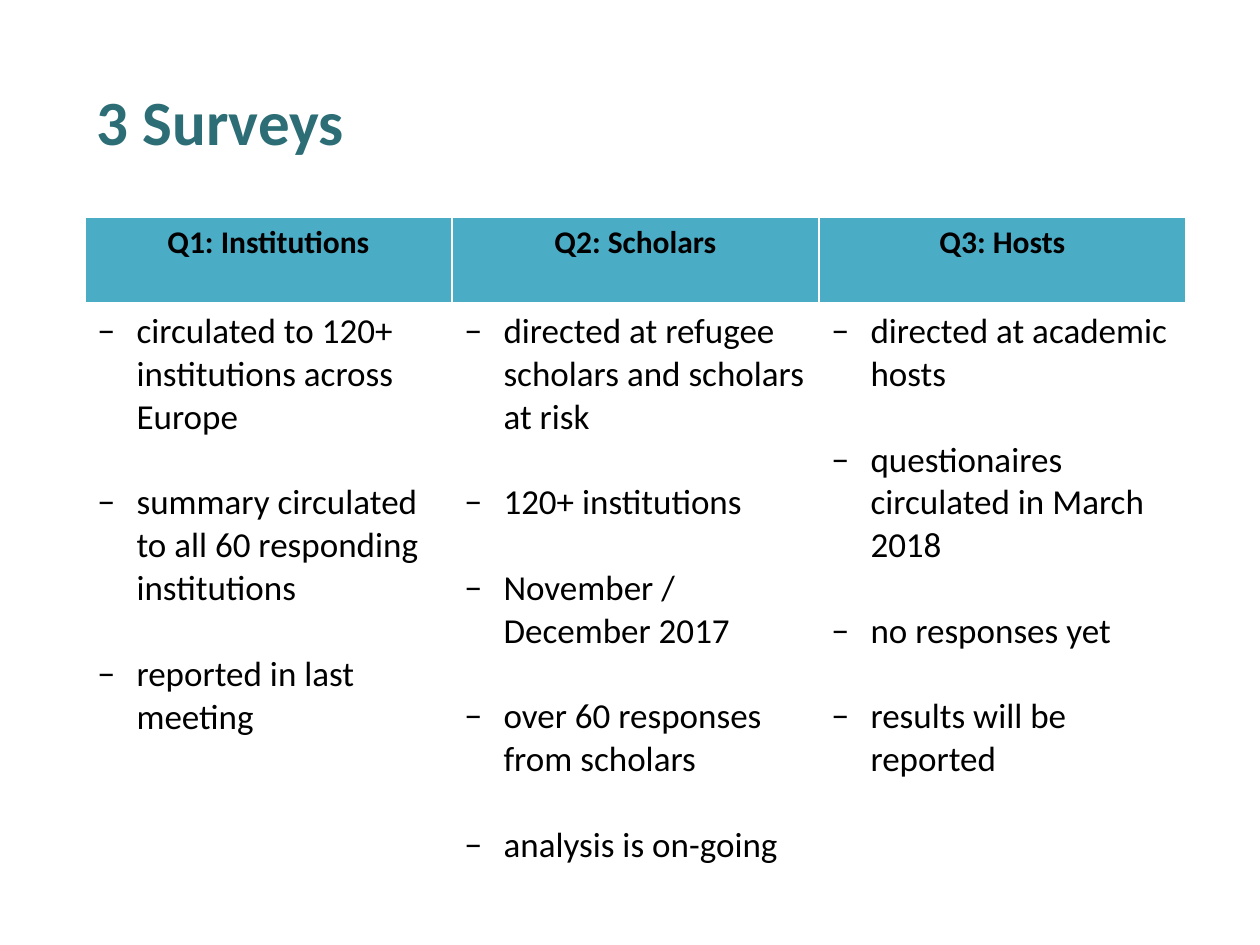
from dataclasses import dataclass

from lxml import etree
from pptx import Presentation
from pptx.dml.color import RGBColor
from pptx.enum.text import MSO_ANCHOR, PP_ALIGN
from pptx.oxml.ns import qn
from pptx.util import Emu, Pt

CENTER = PP_ALIGN.CENTER
MIDDLE = MSO_ANCHOR.MIDDLE
EMU_PER_PX = 914400 / 126


@dataclass(frozen=True)
class Theme:
    font: str = "Calibri"
    title: str = "2D6E76"
    text: str = "000000"
    header: str = "4BACC6"
    paper: str = "FFFFFF"
    title_pt: int = 36
    header_pt: int = 18
    body_pt: int = 20
    gap_pt: float = 24.4
    rule_pt: int = 1
    header_rule_pt: int = 3


@dataclass(frozen=True)
class Survey:
    heading: str
    points: tuple[str, ...]


THEME = Theme()
TITLE_BOX = (84, 45, 1113, 150)
TABLE_LEFT, TABLE_TOP = 85, 217
COL_WIDTH = 367
ROW_HEIGHTS = (87, 559)
INDENT = 39

SURVEYS = (
    Survey("Q1: Institutions", (
        "circulated to 120+ institutions across Europe",
        "summary circulated to all 60 responding institutions",
        "reported in last meeting",
    )),
    Survey("Q2: Scholars", (
        "directed at refugee scholars and scholars at risk",
        "120+ institutions",
        "November / December 2017",
        "over 60 responses from scholars",
        "analysis is on-going",
    )),
    Survey("Q3: Hosts", (
        "directed at academic hosts",
        "questionaires circulated in March 2018",
        "no responses yet",
        "results will be reported",
    )),
)


def px(n: int) -> Emu:
    return Emu(round(n * EMU_PER_PX))


def write(p, text: str, size: int, color: str, bold: bool) -> None:
    p.text = text
    for r in p.runs:
        r.font.name = THEME.font
        r.font.size = Pt(size)
        r.font.bold = bold
        r.font.color.rgb = RGBColor.from_string(color)


def add_dash(p) -> None:
    pPr = p._p.get_or_add_pPr()
    pPr.set("marL", str(px(INDENT)))
    pPr.set("indent", str(-px(INDENT)))
    etree.SubElement(pPr, qn("a:buFont")).set("typeface", THEME.font)
    etree.SubElement(pPr, qn("a:buChar")).set("char", "−")


def style_cell(cell, fill: str, bottom_pt: int, top_pt: int) -> None:
    cell.fill.solid()
    cell.fill.fore_color.rgb = RGBColor.from_string(fill)
    tcPr = cell._tc.get_or_add_tcPr()
    widths = {"lnL": THEME.rule_pt, "lnR": THEME.rule_pt,
              "lnT": top_pt, "lnB": bottom_pt}
    for i, (side, width) in enumerate(widths.items()):
        ln = etree.Element(qn(f"a:{side}"), w=str(Pt(width)))
        solid = etree.SubElement(ln, qn("a:solidFill"))
        etree.SubElement(solid, qn("a:srgbClr")).set("val", THEME.paper)
        tcPr.insert(i, ln)


def add_title(s, text: str) -> None:
    tf = s.shapes.add_textbox(*map(px, TITLE_BOX)).text_frame
    tf.word_wrap = True
    tf.vertical_anchor = MIDDLE
    write(tf.paragraphs[0], text, THEME.title_pt, THEME.title, True)


def fill_column(table, col: int, survey: Survey) -> None:
    head, body = table.cell(0, col), table.cell(1, col)
    style_cell(head, THEME.header, THEME.header_rule_pt, THEME.rule_pt)
    style_cell(body, THEME.paper, THEME.rule_pt, THEME.header_rule_pt)
    p = head.text_frame.paragraphs[0]
    p.alignment = CENTER
    write(p, survey.heading, THEME.header_pt, THEME.text, True)
    tf = body.text_frame
    for i, point in enumerate(survey.points):
        p = tf.add_paragraph() if i else tf.paragraphs[0]
        add_dash(p)
        if i:
            p.space_before = Pt(THEME.gap_pt)
        write(p, point, THEME.body_pt, THEME.text, False)


def add_surveys(s, surveys: tuple[Survey, ...]) -> None:
    table = s.shapes.add_table(
        len(ROW_HEIGHTS), len(surveys), px(TABLE_LEFT), px(TABLE_TOP),
        px(COL_WIDTH * len(surveys)), px(sum(ROW_HEIGHTS))).table
    table.horz_banding = False
    for row, height in zip(table.rows, ROW_HEIGHTS):
        row.height = px(height)
    for col, survey in enumerate(surveys):
        table.columns[col].width = px(COL_WIDTH)
        fill_column(table, col, survey)


def main() -> None:
    prs = Presentation()
    prs.slide_width, prs.slide_height = px(1260), px(945)
    s = prs.slides.add_slide(prs.slide_layouts[6])
    add_title(s, "3 Surveys")
    add_surveys(s, SURVEYS)
    prs.save("out.pptx")


if __name__ == "__main__":
    main()
